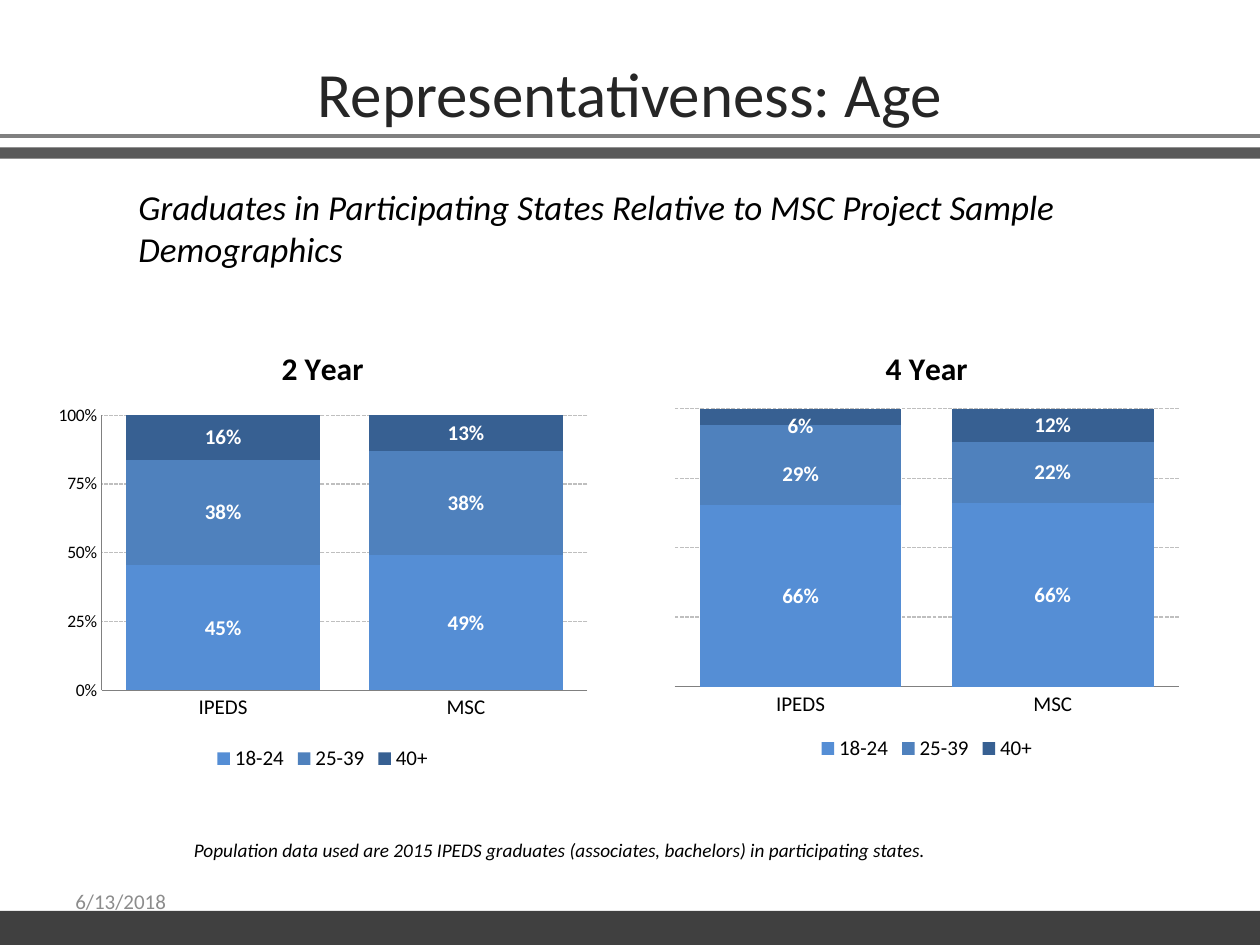
"""Build the age representativeness slide with two stacked percentage charts."""
from dataclasses import dataclass, field
from typing import Any

from lxml.etree import SubElement
from pptx import Presentation
from pptx.chart.data import CategoryChartData
from pptx.dml.color import RGBColor
from pptx.enum.chart import XL_CHART_TYPE, XL_LABEL_POSITION, XL_LEGEND_POSITION, XL_TICK_MARK
from pptx.enum.dml import MSO_LINE
from pptx.enum.shapes import MSO_CONNECTOR, MSO_SHAPE
from pptx.enum.text import MSO_ANCHOR, PP_ALIGN
from pptx.oxml import parse_xml
from pptx.oxml.ns import nsdecls, qn
from pptx.util import Inches, Pt

WIDTH, HEIGHT = Inches(10), Inches(7.5)
COLUMNS, ROWS = 100, 75
COLORS = {
    "title": "262626", "text": "000000", "date": "8C8C8C", "label": "FFFFFF",
    "band": "595959", "footer": "404040", "rule": "808080", "grid": "BFBFBF",
}
AGE_COLORS = {"18-24": "558ED5", "25-39": "4F81BD", "40+": "376092"}
SOURCES = ("IPEDS", "MSC")


@dataclass(frozen=True)
class Area:
    column: float
    row: float
    columns: float
    rows: float

    def box(self) -> tuple[int, int, int, int]:
        return (across(self.column), down(self.row), across(self.columns), down(self.rows))


@dataclass(frozen=True)
class Caption:
    words: str
    area: Area
    size: int
    color: str = "text"
    italic: bool = False
    align: PP_ALIGN = PP_ALIGN.LEFT
    anchor: MSO_ANCHOR = MSO_ANCHOR.TOP


@dataclass(frozen=True)
class Band:
    area: Area
    color: str


@dataclass(frozen=True)
class AgeChart:
    heading: str
    area: Area
    plot: tuple[float, float, float, float]
    shares: tuple[tuple[float, float], ...]
    show_scale: bool = True
    label_shifts: dict[int, tuple[float, float]] = field(default_factory=dict)


CAPTIONS = (
    Caption("Representativeness: Age", Area(0, 3.8, 100, 7.1), 36, "title", align=PP_ALIGN.CENTER),
    Caption("Graduates in Participating States Relative to MSC Project Sample Demographics",
            Area(10, 14.2, 82.5, 7.7), 20, italic=True),
    Caption("6/13/2018", Area(5, 69.5, 23.3, 4), 12, "date", anchor=MSO_ANCHOR.MIDDLE),
    Caption("Population data used are 2015 IPEDS graduates (associates, bachelors) "
            "in participating states.", Area(14.4, 66, 76.7, 2.9), 11, italic=True),
)
BANDS = (Band(Area(0, 11.7, 100, 0.9), "band"), Band(Area(0, 72.3, 100, 2.7), "footer"))
RULE_ROW = 10.8
CHARTS = (
    AgeChart("2 Year", Area(3.7, 25.8, 43.8, 35.8), (0.1, 0.2, 0.88, 0.61),
             ((0.45, 0.49), (0.38, 0.38), (0.16, 0.13))),
    AgeChart("4 Year", Area(52.7, 25.8, 41.7, 35), (0.02, 0.19, 0.96, 0.63),
             ((0.66, 0.66), (0.29, 0.22), (0.06, 0.12)), False,
             {1: (0, 0.02), 2: (0, 0.02)}),
)


def across(columns: float) -> int:
    return round(WIDTH * columns / COLUMNS)


def down(rows: float) -> int:
    return round(HEIGHT * rows / ROWS)


def rgb(name: str) -> RGBColor:
    return RGBColor.from_string(COLORS[name])


def apply(target: Any, values: dict[str, Any]) -> None:
    for attribute, value in values.items():
        setattr(target, attribute, value)


def style_font(font: Any, size: float, color: str = "text", **extras: bool) -> None:
    apply(font, {"name": "Calibri", "size": Pt(size), **extras})
    font.color.rgb = rgb(color)


def draw_caption(slide: Any, caption: Caption) -> None:
    frame = slide.shapes.add_textbox(*caption.area.box()).text_frame
    apply(frame, {"word_wrap": True, "vertical_anchor": caption.anchor})
    paragraph = frame.paragraphs[0]
    paragraph.alignment = caption.align
    run = paragraph.add_run()
    run.text = caption.words
    style_font(run.font, caption.size, caption.color, italic=caption.italic)


def draw_band(slide: Any, band: Band) -> None:
    strip = slide.shapes.add_shape(MSO_SHAPE.RECTANGLE, *band.area.box())
    strip.shadow.inherit = False
    strip.fill.solid()
    strip.fill.fore_color.rgb = rgb(band.color)
    strip.line.fill.background()


def draw_rule(slide: Any) -> None:
    rule = slide.shapes.add_connector(
        MSO_CONNECTOR.STRAIGHT, 0, down(RULE_ROW), WIDTH, down(RULE_ROW))
    rule.line.color.rgb = rgb("rule")
    rule.line.width = Pt(2.25)
    SubElement(rule._element.spPr, qn("a:effectLst"))


def manual_layout(inner: bool = False, **fractions: float) -> Any:
    target = '<c:layoutTarget val="inner"/><c:xMode val="edge"/><c:yMode val="edge"/>'
    places = "".join(f'<c:{key} val="{value}"/>' for key, value in fractions.items())
    return parse_xml(f'<c:layout {nsdecls("c")}><c:manualLayout>'
                     f'{target if inner else ""}{places}</c:manualLayout></c:layout>')


def shift_label(series: Any, shift: tuple[float, float]) -> None:
    label = series.points[0].data_label
    label.position = XL_LABEL_POSITION.CENTER
    style_font(label.font, 12, "label", bold=True)
    index = series._element.find(".//" + qn("c:dLbl")).find(qn("c:idx"))
    index.addnext(parse_xml(f'<c:numFmt {nsdecls("c")} formatCode="0%" sourceLinked="0"/>'))
    index.addnext(manual_layout(x=shift[0], y=shift[1]))


def style_axes(chart: Any, show_scale: bool) -> None:
    ages, scale = chart.category_axis, chart.value_axis
    for axis, size in ((ages, 12), (scale, 10)):
        apply(axis, {"major_tick_mark": XL_TICK_MARK.NONE, "minor_tick_mark": XL_TICK_MARK.NONE})
        style_font(axis.tick_labels.font, size)
        axis.format.line.color.rgb = rgb("rule")
    apply(scale, {"minimum_scale": 0, "maximum_scale": 1, "major_unit": 0.25,
                  "has_major_gridlines": True, "visible": show_scale})
    apply(scale.tick_labels, {"number_format": "0%", "number_format_is_linked": False})
    gridline = scale.major_gridlines.format.line
    gridline.color.rgb = rgb("grid")
    apply(gridline, {"width": Pt(0.75), "dash_style": MSO_LINE.SQUARE_DOT})


def draw_chart(slide: Any, age_chart: AgeChart) -> None:
    data = CategoryChartData(number_format="0%")
    data.categories = SOURCES
    for age, shares in zip(AGE_COLORS, age_chart.shares):
        data.add_series(age, shares)
    chart = slide.shapes.add_chart(
        XL_CHART_TYPE.COLUMN_STACKED_100, *age_chart.area.box(), data).chart
    style_font(chart.font, 10)
    apply(chart, {"has_title": True, "has_legend": True})
    heading = chart.chart_title.text_frame
    heading.text = age_chart.heading
    style_font(heading.paragraphs[0].runs[0].font, 18, bold=True)
    apply(chart.legend, {"position": XL_LEGEND_POSITION.BOTTOM, "include_in_layout": False})
    style_font(chart.legend.font, 12)
    style_axes(chart, age_chart.show_scale)
    columns = chart.plots[0]
    apply(columns, {"gap_width": 25, "overlap": 100, "vary_by_categories": False})
    for order, series in enumerate(columns.series):
        series.format.fill.solid()
        series.format.fill.fore_color.rgb = RGBColor.from_string(AGE_COLORS[series.name])
        apply(series.data_labels, {"show_value": True, "number_format": "0%",
                                   "number_format_is_linked": False,
                                   "position": XL_LABEL_POSITION.CENTER})
        style_font(series.data_labels.font, 12, "label", bold=True)
        if order in age_chart.label_shifts:
            shift_label(series, age_chart.label_shifts[order])
    plot_area = chart._chartSpace.find(".//" + qn("c:plotArea"))
    for automatic in plot_area.findall(qn("c:layout")):
        plot_area.remove(automatic)
    plot_area.insert(0, manual_layout(True, **dict(zip("xywh", age_chart.plot))))


def main() -> None:
    deck = Presentation()
    apply(deck, {"slide_width": WIDTH, "slide_height": HEIGHT})
    slide = deck.slides.add_slide(deck.slide_layouts[6])
    for band in BANDS:
        draw_band(slide, band)
    draw_rule(slide)
    for caption in CAPTIONS:
        draw_caption(slide, caption)
    for age_chart in CHARTS:
        draw_chart(slide, age_chart)
    deck.save("out.pptx")


if __name__ == "__main__":
    main()
